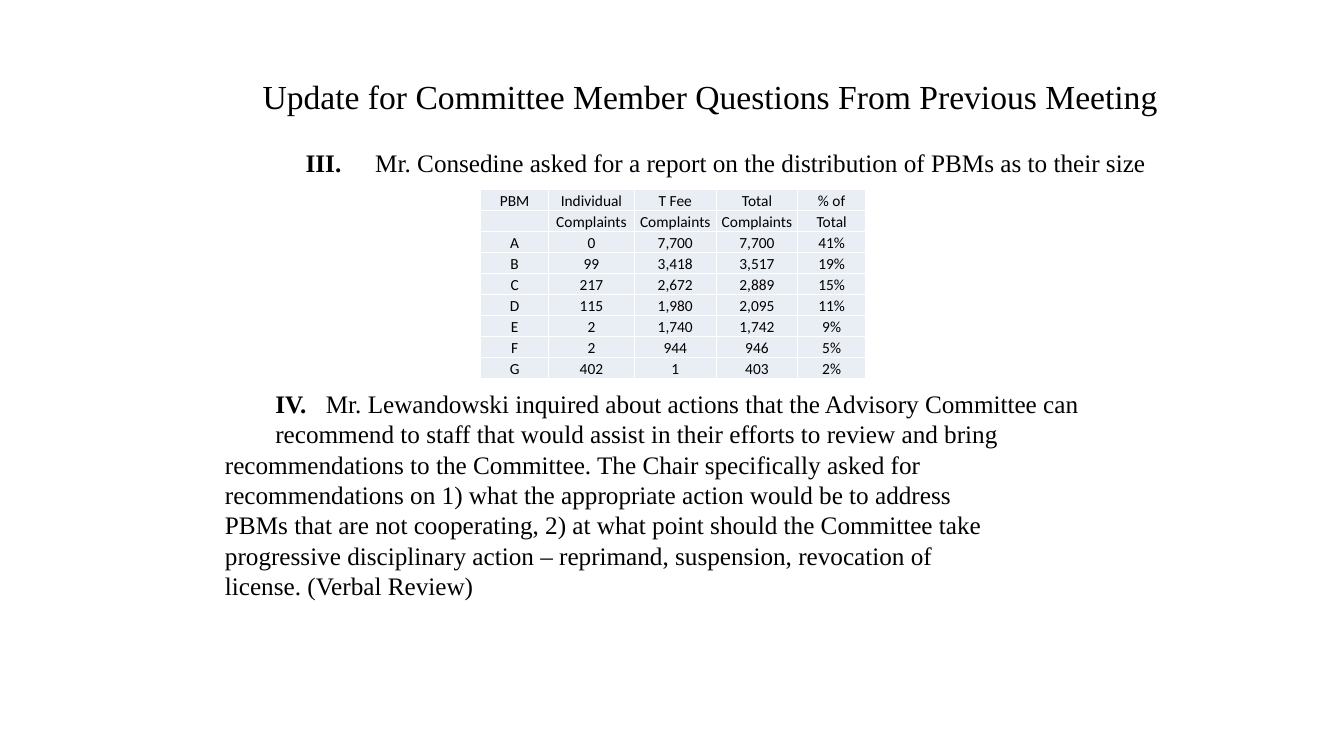
from dataclasses import dataclass

from lxml import etree
from pptx import Presentation
from pptx import util as u
from pptx.dml.color import RGBColor
from pptx.enum import text as t
from pptx.oxml import ns

# The grid has 100 columns and 75 rows.
WIDE, HIGH = u.Inches(13.33), u.Inches(7.5)
SERIF, SANS = "Times New Roman", "Calibri"
INK, PALE, WHITE = "000000", "E9EDF4", "FFFFFF"


@dataclass
class Area:
    left: float
    top: float
    width: float
    height: float

    def box(self) -> tuple:
        return (across(self.left), down(self.top),
                across(self.width), down(self.height))


@dataclass
class Item:
    mark: str
    words: str
    margin: float = 0
    indent: float = 0
    before: float = 0


TITLE = Area(16, 7, 73.67, 5)
BODY = Area(16, 14.1, 73.67, 47)
TABLE = Area(35.78, 18.8, 28.6, 18.8)
COLS = (5.03, 6.4, 6.08, 6.08, 5.03)
ROWS = (
    ("PBM", "Individual", "T Fee", "Total", "% of"),
    ("", "Complaints", "Complaints", "Complaints", "Total"),
    ("A", "0", "7,700", "7,700", "41%"),
    ("B", "99", "3,418", "3,517", "19%"),
    ("C", "217", "2,672", "2,889", "15%"),
    ("D", "115", "1,980", "2,095", "11%"),
    ("E", "2", "1,740", "1,742", "9%"),
    ("F", "2", "944", "946", "5%"),
    ("G", "402", "1", "403", "2%"),
)
INQUIRY = (
    "Mr. Lewandowski inquired about actions that the Advisory Committee can",
    "\trecommend to staff that would assist in their efforts to review and bring",
    "recommendations to the Committee. The Chair specifically asked for",
    "recommendations on 1) what the appropriate action would be to address",
    "PBMs that are not cooperating, 2) at what point should the Committee take",
    "progressive disciplinary action – reprimand, suspension, revocation of",
    "license. (Verbal Review)",
)
ITEMS = (
    Item("III.\t", "Mr. Consedine asked for a report on the distribution "
         "of PBMs as to their size", margin=1.49, indent=-0.69),
    Item("\tIV.\t", "\v".join(INQUIRY), before=150.4),
)


def across(cols: float) -> int:
    return round(WIDE * cols / 100)


def down(rows: float) -> int:
    return round(HIGH * rows / 75)


def color(code: str) -> RGBColor:
    return RGBColor.from_string(code)


def style(para, face: str, size: float) -> None:
    para.font.name = face
    para.font.size = u.Pt(size)
    para.font.color.rgb = color(INK)


def add_title(slide) -> None:
    title = slide.shapes.title
    title.left, title.top, title.width, title.height = TITLE.box()
    frame = title.text_frame
    frame.text = "Update for Committee Member Questions From Previous Meeting"
    frame.vertical_anchor = t.MSO_ANCHOR.TOP
    para = frame.paragraphs[0]
    para.alignment = t.PP_ALIGN.CENTER
    style(para, SERIF, 24)


def add_items(slide) -> None:
    frame = slide.shapes.add_textbox(*BODY.box()).text_frame
    frame.word_wrap = True
    for i, item in enumerate(ITEMS):
        para = frame.add_paragraph() if i else frame.paragraphs[0]
        props = para._p.get_or_add_pPr()
        props.set("marL", str(u.Inches(item.margin)))
        props.set("indent", str(u.Inches(item.indent)))
        para.line_spacing = u.Pt(21.7)
        if item.before:
            para.space_before = u.Pt(item.before)
        mark = para.add_run()
        mark.text = item.mark
        mark.font.bold = True
        for j, line in enumerate(item.words.split("\v")):
            if j:
                para.add_line_break()
            para.add_run().text = line
        style(para, SERIF, 18)


def add_edges(cell) -> None:
    """Draw a thin white line on each side of the cell."""
    props = cell._tc.get_or_add_tcPr()
    for side in ("a:lnL", "a:lnR", "a:lnT", "a:lnB"):
        edge = etree.SubElement(props, ns.qn(side), w=str(u.Pt(1)))
        fill = etree.SubElement(edge, ns.qn("a:solidFill"))
        etree.SubElement(fill, ns.qn("a:srgbClr"), val=WHITE)


def fill_cell(cell, words: str) -> None:
    add_edges(cell)
    cell.fill.solid()
    cell.fill.fore_color.rgb = color(PALE)
    cell.margin_left = cell.margin_right = cell.margin_top = u.Inches(0.01)
    cell.margin_bottom = 0
    cell.vertical_anchor = t.MSO_ANCHOR.BOTTOM
    cell.text = words
    para = cell.text_frame.paragraphs[0]
    para.alignment = t.PP_ALIGN.CENTER
    style(para, SANS, 11)
    if not words:
        etree.SubElement(para._p, ns.qn("a:endParaRPr"), sz="1100")


def add_counts(slide) -> None:
    table = slide.shapes.add_table(len(ROWS), len(COLS), *TABLE.box()).table
    table.first_row = table.horz_banding = False
    for col, width in zip(table.columns, COLS):
        col.width = across(width)
    for r, row in enumerate(ROWS):
        table.rows[r].height = down(TABLE.height / len(ROWS))
        for c, words in enumerate(row):
            fill_cell(table.cell(r, c), words)


def main() -> None:
    deck = Presentation()
    deck.slide_width, deck.slide_height = WIDE, HIGH
    slide = deck.slides.add_slide(deck.slide_layouts[5])
    add_title(slide)
    add_items(slide)
    add_counts(slide)
    deck.save("out.pptx")


if __name__ == "__main__":
    main()
